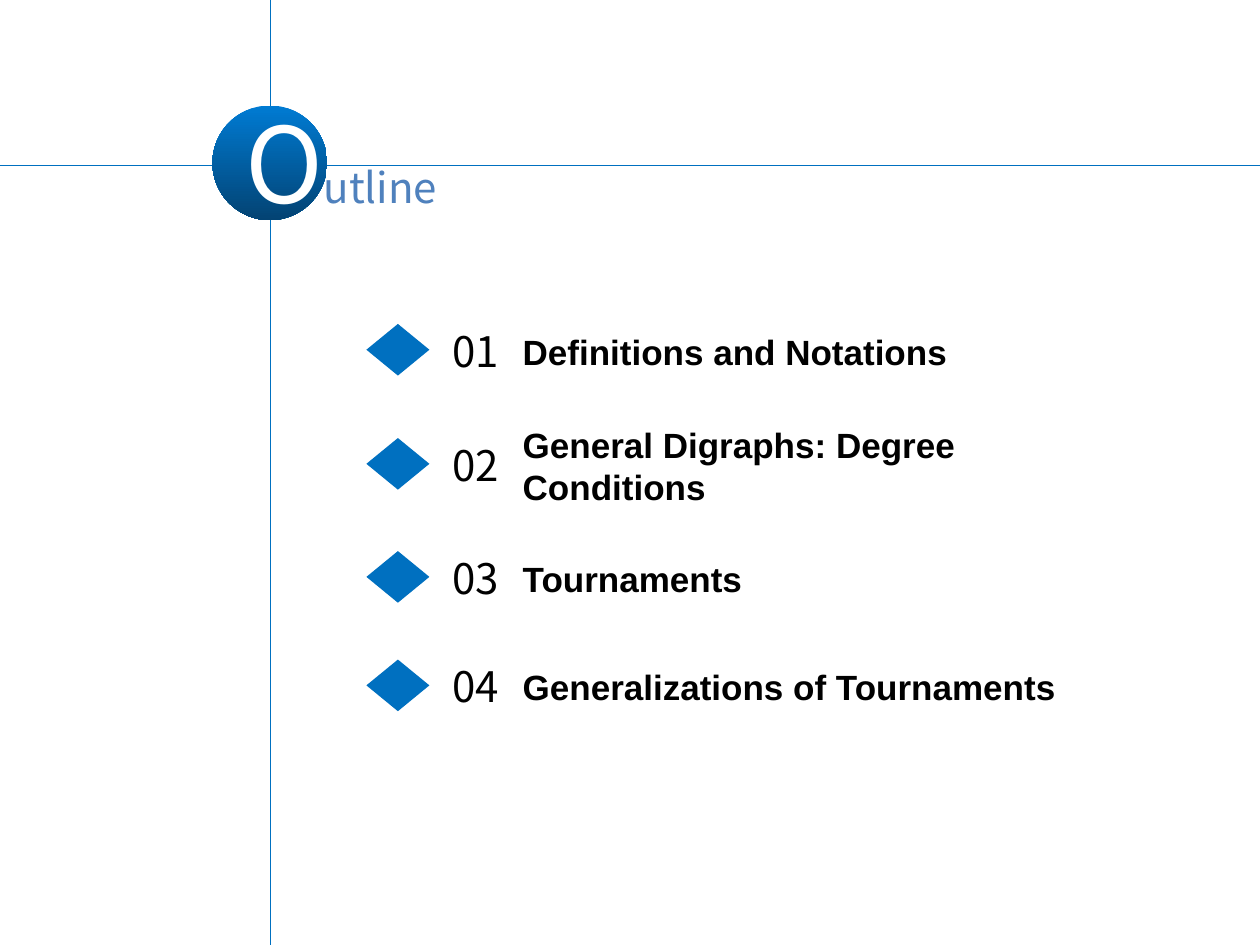
from pptx import Presentation
from pptx.dml.color import RGBColor
from pptx.enum.shapes import MSO_CONNECTOR, MSO_SHAPE
from pptx.enum.text import MSO_ANCHOR, PP_ALIGN
from pptx.oxml.ns import qn
from pptx.util import Pt
from lxml import etree

LINE = MSO_CONNECTOR.STRAIGHT
ELLIPSE, DIAMOND = MSO_SHAPE.OVAL, MSO_SHAPE.DIAMOND
MIDDLE, LEFT = MSO_ANCHOR.MIDDLE, PP_ALIGN.LEFT

# Content: heading parts, then topics with the top of each row
HEADING = [("O", 60, "white"), ("utline", 24, "heading")]
TOPICS = [
    ("Definitions and Notations", 183),
    ("General Digraphs: Degree Conditions", 248.2),
    ("Tournaments", 312.8),
    ("Generalizations of Tournaments", 374.8),
]

COLORS = {
    "blue": "0070C0", "light": "007BD3", "dark": "034373",
    "heading": "4F81BD", "white": "FFFFFF", "black": "000000",
}
NUMBER_FONT, TOPIC_FONT = "Noto Sans CJK SC", "Arial"
WIDTH, HEIGHT = 720, 540
CROSS_X, CROSS_Y = 154.4, 94.5
ROW_HEIGHT = 35.3
DIAMOND_LEFT, DIAMOND_WIDTH, DIAMOND_HEIGHT = 209.4, 36, 29.5
NUMBER_LEFT, NUMBER_WIDTH = 251.2, 46
TOPIC_LEFT, TOPIC_WIDTH = 291.6, 328


def color(name):
    return RGBColor.from_string(COLORS[name])


def box(*lengths):
    return [Pt(length) for length in lengths]


def format_run(run, size, font_name, color_name, bold=False):
    run.font.size = Pt(size)
    run.font.name = font_name
    run.font.bold = bold
    run.font.color.rgb = color(color_name)


def add_rule(slide, *ends):
    rule = slide.shapes.add_connector(LINE, *box(*ends))
    rule.line.color.rgb = color("blue")
    rule.line.width = Pt(0.25)
    etree.SubElement(rule._element.spPr, qn("a:effectLst"))


def add_plain_shape(slide, kind, *place):
    shape = slide.shapes.add_shape(kind, *box(*place))
    shape.shadow.inherit = False
    shape.line.fill.background()
    return shape


def add_label(slide, text, place, *style):
    text_frame = slide.shapes.add_textbox(*box(*place)).text_frame
    text_frame.word_wrap = True
    text_frame.vertical_anchor = MIDDLE
    text_frame.text = text
    format_run(text_frame.paragraphs[0].runs[0], *style)


def add_heading(slide):
    disc = add_plain_shape(slide, ELLIPSE, 121.4, 60.3, 65.5, 65.5)
    disc.fill.gradient()
    disc.fill.gradient_angle = 270
    for stop, name, position in zip(disc.fill.gradient_stops, ("light", "dark"), (0, 1)):
        stop.color.rgb = color(name)
        stop.position = position

    title = slide.shapes.title
    title.left, title.top, title.width, title.height = box(133.2, 50.4, 351.4, 83.5)
    title.text_frame.word_wrap = True
    title.text_frame.vertical_anchor = MIDDLE
    paragraph = title.text_frame.paragraphs[0]
    paragraph.alignment = LEFT
    for text, size, color_name in HEADING:
        run = paragraph.add_run()
        run.text = text
        format_run(run, size, NUMBER_FONT, color_name)
    # Bring the title in front of the disc
    slide.shapes._spTree.append(title._element)


def add_topic(slide, number, topic, top):
    diamond_top = top + (ROW_HEIGHT - DIAMOND_HEIGHT) / 2 - 0.8
    diamond = add_plain_shape(slide, DIAMOND, DIAMOND_LEFT, diamond_top,
                              DIAMOND_WIDTH, DIAMOND_HEIGHT)
    diamond.fill.solid()
    diamond.fill.fore_color.rgb = color("blue")
    add_label(slide, f"{number:02}", (NUMBER_LEFT, top - 0.4, NUMBER_WIDTH, ROW_HEIGHT),
              24, NUMBER_FONT, "black")
    add_label(slide, topic, (TOPIC_LEFT, top, TOPIC_WIDTH, ROW_HEIGHT),
              20, TOPIC_FONT, "black", True)


def main():
    presentation = Presentation()
    presentation.slide_width, presentation.slide_height = box(WIDTH, HEIGHT)
    slide = presentation.slides.add_slide(presentation.slide_layouts[5])

    # Crossing rules
    add_rule(slide, 0, CROSS_Y, WIDTH, CROSS_Y)
    add_rule(slide, CROSS_X, 0, CROSS_X, HEIGHT)

    # Heading and numbered topics
    add_heading(slide)
    for number, (topic, top) in enumerate(TOPICS, start=1):
        add_topic(slide, number, topic, top)

    presentation.save("out.pptx")


if __name__ == "__main__":
    main()
